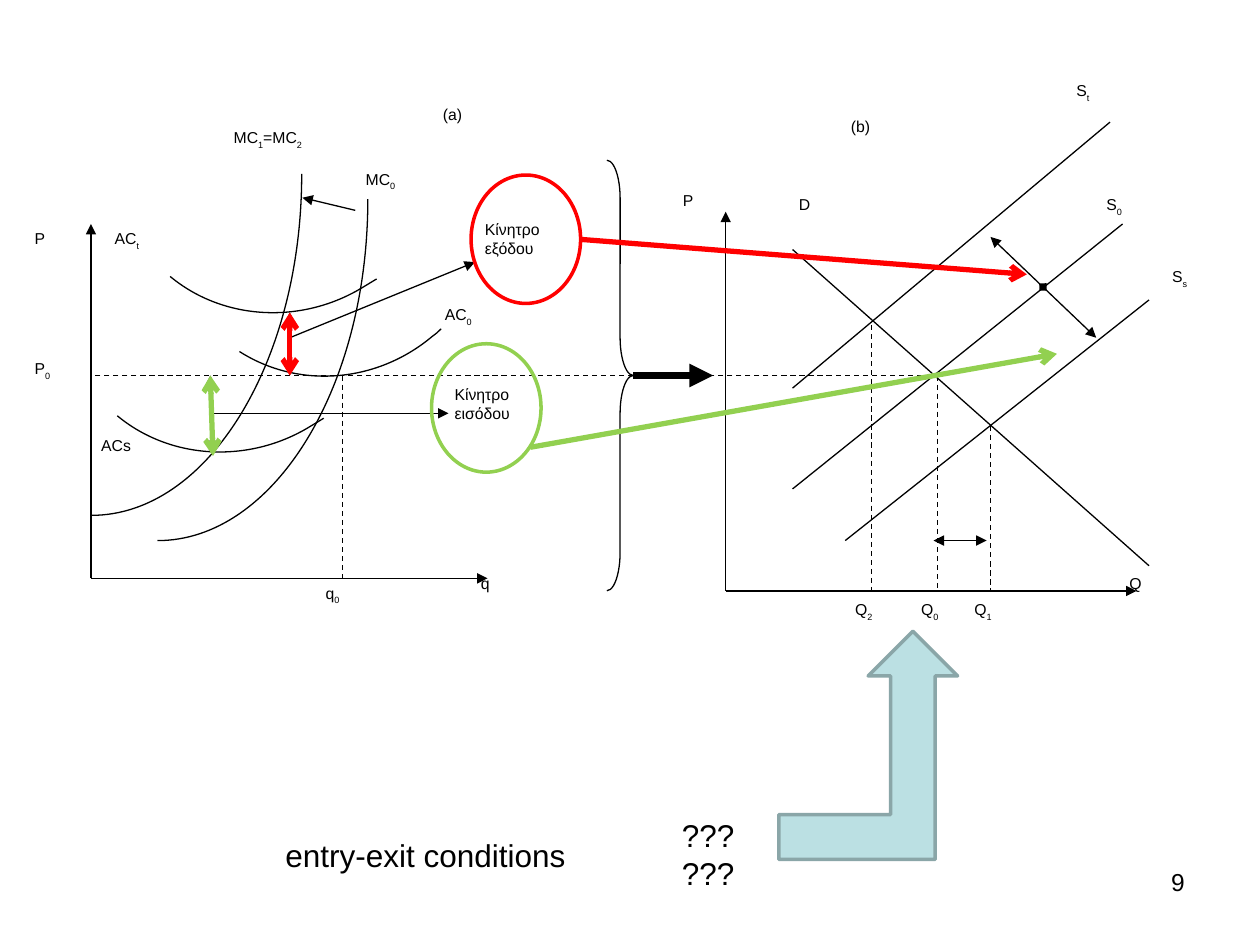
from dataclasses import dataclass
from math import cos, radians, sin

from lxml.etree import SubElement
from pptx import Presentation
from pptx.dml.color import RGBColor
from pptx.enum.dml import MSO_LINE
from pptx.enum.shapes import MSO_CONNECTOR, MSO_SHAPE
from pptx.enum.text import PP_ALIGN
from pptx.oxml.ns import qn
from pptx.util import Pt


@dataclass(frozen=True)
class Theme:
    """Colours, font, type sizes and line widths of the slide."""
    font: str = "Arial"
    black: str = "000000"
    exit_red: str = "FF0000"
    entry_green: str = "92D050"
    arrow_fill: str = "BBE0E3"
    arrow_line: str = "8AA6A8"
    label: float = 9
    number: float = 14
    body: float = 18
    thin: float = 0.75
    outline: float = 2
    bold: float = 3
    heavy: float = 4.5


THEME = Theme()
AXIS_LEFT, AXIS_RIGHT = 52, 414.7
BASE_LEFT, BASE_RIGHT = 330.5, 337.7
PRICE = 214.6
EXIT_X, EXIT_TOP = 165.6, 178.6
ENTRY_X = 120.2
MARGINAL_COST = [(90, 308.9), (156.2, 308.9), (210.2, 221.8), (210.2, 113.8)]
AVERAGE_COST = [(252, 187.9), (250.6, 189.4), (249, 190.8), (247, 192.2),
                (215.3, 218.9), (170.6, 222.5), (136.8, 200.9)]
SHIFTED_COST = [(185, 239), (181.4, 241.2), (177.8, 243.4), (174.2, 245.5),
                (139.7, 265), (96.5, 262.1), (67, 237.6)]
CURVES = [
    (AVERAGE_COST, (136.8, 137.5, 97.9, 92.2), 140.6, (0, 0)),
    (MARGINAL_COST, (90, 113.4, 120.6, 195.5), 0, (0, 0)),
    (MARGINAL_COST, (90, 113.4, 120.6, 195.5), 0, (-37.8, -14.4)),
    (SHIFTED_COST, (67, 178.6, 102.2, 92.2), 150.9, (0, 0)),
    (SHIFTED_COST, (67, 178.6, 102.2, 92.2), 150.9, (30.2, -79.6)),
]
SUPPLY_AND_DEMAND = [
    ((452.9, 142.6), (656.6, 323.3)),
    ((452.9, 279.4), (641.5, 128)),
    ((483, 308.9), (656.6, 171.4)),
    ((452.9, 221.8), (634.3, 69.8)),
]
QUANTITY_DROPS = [(195.8, PRICE, BASE_LEFT), (498.2, 185.8, BASE_RIGHT),
                  (535.7, PRICE, BASE_RIGHT), (566, 243.4, BASE_RIGHT)]
AXES = [(AXIS_LEFT, 128, BASE_LEFT, 278.6), (AXIS_RIGHT, 121, BASE_RIGHT, 649.4)]
ARROWS = [
    ((203, 120.2), (172.8, 113), None),
    ((596, 164), (626.4, 193), None),
    ((596, 164), (566, 135.4), "diamond"),
    ((533.5, 308.9), (563.8, 308.9), "triangle"),
    ((EXIT_X, EXIT_TOP), (EXIT_X, PRICE), "triangle"),
    ((ENTRY_X, 257.8), (ENTRY_X, PRICE), "triangle"),
    ((ENTRY_X, 236.2), (256.3, 236.2), None),
    ((EXIT_X, 193), (271.4, 149.8), None),
]
LABELS = [
    ("MC_0", 203.2, 94, 49), ("MC_1=MC_2", 127.8, 70.2, 105.8),
    ("AC_0", 248.4, 171.4, 46.8), ("ACs", 52.1, 245.9, 34, 20),
    ("q_0", 180.4, 330.5, 33.8), ("P_0", 14.1, 202.3, 35.3),
    ("Q_0", 520.6, 339.8, 36.7), ("D", 450.7, 108.4, 31.7),
    ("S_0", 626.4, 108.4, 35.3), ("S_s", 664.1, 149.8, 24.5, 20),
    ("Q_1", 551, 339.8, 36.7), ("Q", 639.6, 324.9, 31.7),
    ("P", 384.5, 106.2, 30.2), ("q", 269, 324.9, 29.5),
    ("P", 14.1, 127.8, 30.2), ("Q_2", 482.9, 339.8, 36.7),
    ("S_t", 609.3, 43.2, 23, 46), ("AC_t", 59.8, 127.8, 51.8, 20),
    ("(a)", 247.3, 56.9, 38.2), ("(b)", 480.5, 63.8, 38.9),
    ("Κίνητρο\nεισόδου", 254, 216.7, 78.5, 46.8),
    ("Κίνητρο\nεξόδου", 271.4, 122.7, 76.3, 46.8),
]


def add_text(slide, text, left, top, width, height=28, size=THEME.label,
             insets=(5.76, 2.88), align=PP_ALIGN.LEFT):
    """Add a text box in which an underscore makes the next letter a subscript."""
    frame = slide.shapes.add_textbox(Pt(left), Pt(top), Pt(width), Pt(height)).text_frame
    frame.word_wrap = True
    frame.margin_left = frame.margin_right = Pt(insets[0])
    frame.margin_top = frame.margin_bottom = Pt(insets[1])
    for index, line in enumerate(text.split("\n")):
        paragraph = frame.add_paragraph() if index else frame.paragraphs[0]
        paragraph.alignment = align
        first, *others = line.split("_")
        pieces = [(first, False)]
        for other in others:
            pieces += [(other[:1], True), (other[1:], False)]
        for piece, lowered in pieces:
            if not piece:
                continue
            run = paragraph.add_run()
            run.text = piece
            run.font.name = THEME.font
            run.font.size = Pt(size)
            run.font.color.rgb = RGBColor.from_string(THEME.black)
            if lowered:
                run._r.get_or_add_rPr().set("baseline", "-30000")


def format_line(line, color, width):
    """Give a line its colour and width."""
    line.color.rgb = RGBColor.from_string(color)
    line.width = Pt(width)


def add_line(slide, start, end, color=THEME.black, width=THEME.thin,
             dashed=False, head=None, tail=None):
    """Add a straight line with optional dashes and arrowheads."""
    connector = slide.shapes.add_connector(
        MSO_CONNECTOR.STRAIGHT, *(Pt(value) for value in (*start, *end)))
    format_line(connector.line, color, width)
    if dashed:
        connector.line.dash_style = MSO_LINE.DASH
    properties = connector._element.spPr
    for tag, kind in (("a:headEnd", head), ("a:tailEnd", tail)):
        if kind:
            SubElement(properties.find(qn("a:ln")), qn(tag), type=kind)
    SubElement(properties, qn("a:effectLst"))


def add_shape(slide, kind, left, top, width, height, color, line_width, fill=None):
    """Add an outlined preset shape, filled only when a fill is given."""
    shape = slide.shapes.add_shape(kind, Pt(left), Pt(top), Pt(width), Pt(height))
    shape.shadow.inherit = False
    format_line(shape.line, color, line_width)
    if fill:
        shape.fill.solid()
        shape.fill.fore_color.rgb = RGBColor.from_string(fill)
    else:
        shape.fill.background()
    return shape


def add_curve(slide, controls, frame, rotation, shift):
    """Add an open cubic curve in a turned frame, moved by a shift."""
    left, top, width, height = frame
    corners = [(left, top), (left + width, top), (left + width, top + height)]
    start, *others = [(Pt(x + shift[0]), Pt(y + shift[1])) for x, y in corners]
    builder = slide.shapes.build_freeform(*start)
    builder.add_line_segments(others, close=False)
    curve = builder.convert_to_shape()
    curve.rotation = rotation
    curve.shadow.inherit = False
    curve.fill.background()
    format_line(curve.line, THEME.black, THEME.thin)
    outline = next(curve._element.iter(qn("a:path")))
    for segment in list(outline):
        outline.remove(segment)
    cosine, sine = cos(radians(rotation)), sin(radians(rotation))
    for index, (x, y) in enumerate(controls):
        if index == 0:
            segment = SubElement(outline, qn("a:moveTo"))
        elif index % 3 == 1:
            segment = SubElement(outline, qn("a:cubicBezTo"))
        across, down = x - left - width / 2, y - top - height / 2
        SubElement(segment, qn("a:pt"),
                   x=str(Pt(width / 2 + across * cosine + down * sine)),
                   y=str(Pt(height / 2 - across * sine + down * cosine)))


def add_diagrams(slide):
    """Draw the firm and market diagrams with their labels."""
    for x, top, base, right in AXES:
        add_line(slide, (x, top), (x, base), head="triangle")
        add_line(slide, (x, base), (right, base), tail="triangle")
    for curve in CURVES:
        add_curve(slide, *curve)
    for start, end in SUPPLY_AND_DEMAND:
        add_line(slide, start, end)
    add_line(slide, (532, PRICE), (AXIS_LEFT, PRICE), dashed=True)
    for x, top, bottom in QUANTITY_DROPS:
        add_line(slide, (x, top), (x, bottom), dashed=True)
    for start, end, head in ARROWS:
        add_line(slide, start, end, head=head, tail="triangle")
    for label in LABELS:
        add_text(slide, *label)
    brace = add_shape(slide, MSO_SHAPE.RIGHT_BRACE, 346.8, 91.6, 15.1, 246,
                      THEME.black, THEME.thin)
    brace.adjustments[0] = 1.44
    add_line(slide, (362, PRICE), (407.5, PRICE), width=THEME.heavy, tail="triangle")


def add_incentives(slide):
    """Mark the exit and entry incentives and what they lead to."""
    red, green = THEME.exit_red, THEME.entry_green
    for color, start, end in ((red, (EXIT_X, EXIT_TOP), (EXIT_X, PRICE)),
                              (green, (ENTRY_X, PRICE), (121.7, 260.6))):
        add_line(slide, start, end, color, THEME.bold, head="arrow", tail="arrow")
    for color, left, top in ((red, 269.2, 100), (green, 246.6, 196.4)):
        add_shape(slide, MSO_SHAPE.OVAL, left, top, 62.6, 73.4, color, THEME.outline)
    for color, start, end in ((red, (332, 136.8), (586.8, 156.8)),
                              (green, (303, 255.6), (604, 202.2))):
        add_line(slide, start, end, color, THEME.bold, tail="arrow")


def main():
    """Build and save the slide."""
    presentation = Presentation()
    presentation.slide_width, presentation.slide_height = Pt(720), Pt(540)
    slide = presentation.slides.add_slide(presentation.slide_layouts[6])
    wide = (7.2, 3.6)
    add_text(slide, "9", 516, 492, 168, 37.5, size=THEME.number, insets=wide,
             align=PP_ALIGN.RIGHT)
    add_text(slide, "entry-exit conditions", 156, 474, 179.3, 29,
             size=THEME.body, insets=wide)
    add_diagrams(slide)
    add_shape(slide, MSO_SHAPE.BENT_UP_ARROW, 445, 360.7, 102.2, 130.3,
              THEME.arrow_line, THEME.outline, THEME.arrow_fill)
    add_text(slide, "??????", 382.6, 463, 51, 51, size=THEME.body, insets=wide)
    add_incentives(slide)
    presentation.save("out.pptx")


if __name__ == "__main__":
    main()
